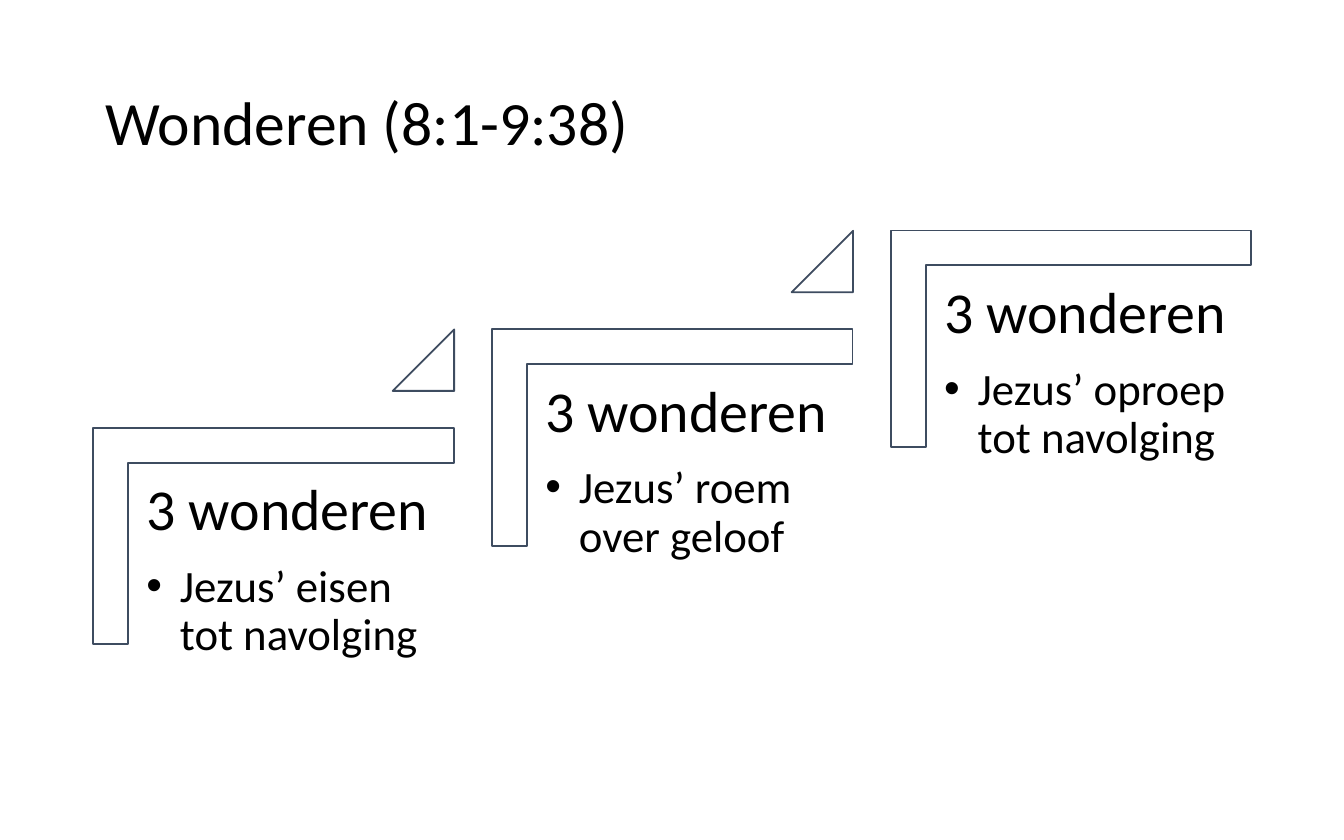
from dataclasses import dataclass

from lxml import etree
from pptx import Presentation
from pptx import util as u
from pptx.dml.color import RGBColor
from pptx.enum import shapes, text
from pptx.oxml import ns

BLACK = RGBColor(0x00, 0x00, 0x00)
WHITE = RGBColor(0xFF, 0xFF, 0xFF)
SLATE = RGBColor(0x3E, 0x4C, 0x60)
FONT = "Calibri"
HEADING = "3 wonderen"
STEP_RIGHT, STEP_UP = 213.7, 52.85
INDENT = 18


@dataclass(frozen=True)
class Box:
    left: float
    top: float
    width: float
    height: float

    def climbed(self, steps: int) -> "Box":
        """Return this box moved up the staircase."""
        return Box(self.left + steps * STEP_RIGHT, self.top - steps * STEP_UP,
                   self.width, self.height)

    def lengths(self) -> list[u.Length]:
        return [u.Pt(value) for value in (self.left, self.top, self.width, self.height)]


@dataclass(frozen=True)
class Line:
    wording: str
    size: float
    space_after: float = 0
    bullet: bool = False


TITLE = Box(49.5, 24, 621, 87)
CORNER = Box(88.4, 190.6, 116, 193.2)
LABEL = Box(69.1, 248.3, 174.2, 152.7)
TRIANGLE = Box(210.4, 176.5, 32.9, 32.9)
STEPS = ("Jezus’ eisen tot navolging", "Jezus’ roem over geloof", "Jezus’ oproep tot navolging")


def set_all(target: object, values: dict[str, object]) -> None:
    for name, value in values.items():
        setattr(target, name, value)


def add_outline(slide, kind: shapes.MSO_SHAPE, box: Box,
                adjustments: tuple[float, ...], rotation: float = 0) -> None:
    shape = slide.shapes.add_shape(kind, *box.lengths())
    shape.rotation = rotation
    shape.shadow.inherit = False
    for index, value in enumerate(adjustments):
        shape.adjustments[index] = value
    shape.fill.solid()
    shape.fill.fore_color.rgb = WHITE
    shape.line.color.rgb = SLATE
    shape.line.width = u.Pt(1)


def add_bullet(paragraph) -> None:
    properties = paragraph._p.get_or_add_pPr()
    properties.set("marL", str(u.Pt(INDENT)))
    properties.set("indent", str(-u.Pt(INDENT)))
    font = etree.SubElement(properties, ns.qn("a:buFont"))
    font.set("typeface", "Arial")
    etree.SubElement(properties, ns.qn("a:buChar")).set("char", "•")


def add_text(slide, box: Box, lines: list[Line], anchor: text.MSO_ANCHOR,
             side: float, vertical: float) -> None:
    frame = slide.shapes.add_textbox(*box.lengths()).text_frame
    set_all(frame, {
        "word_wrap": True, "vertical_anchor": anchor,
        "margin_left": u.Pt(side), "margin_right": u.Pt(side),
        "margin_top": u.Pt(vertical), "margin_bottom": u.Pt(vertical),
    })
    for index, line in enumerate(lines):
        paragraph = frame.add_paragraph() if index else frame.paragraphs[0]
        set_all(paragraph, {"line_spacing": 0.9, "space_after": u.Pt(line.space_after)})
        run = paragraph.add_run()
        run.text = line.wording
        set_all(run.font, {"name": FONT, "size": u.Pt(line.size)})
        run.font.color.rgb = BLACK
        if line.bullet:
            add_bullet(paragraph)


def main() -> None:
    presentation = Presentation()
    set_all(presentation, {"slide_width": u.Pt(720), "slide_height": u.Pt(450)})
    slide = presentation.slides.add_slide(presentation.slide_layouts[6])
    add_text(slide, TITLE, [Line("Wonderen (8:1-9:38)", 33)],
             text.MSO_ANCHOR.MIDDLE, 7.2, 3.6)
    for number, wording in enumerate(STEPS):
        add_outline(slide, shapes.MSO_SHAPE.CORNER, CORNER.climbed(number),
                    (0.161, 0.161), rotation=90)
        lines = [Line(HEADING, 31, 10.85), Line(wording, 24, 3.6, bullet=True)]
        add_text(slide, LABEL.climbed(number), lines, text.MSO_ANCHOR.TOP, 9.3, 9.3)
        if number < len(STEPS) - 1:
            add_outline(slide, shapes.MSO_SHAPE.ISOSCELES_TRIANGLE,
                        TRIANGLE.climbed(number), (1,))
    presentation.save("out.pptx")


if __name__ == "__main__":
    main()
